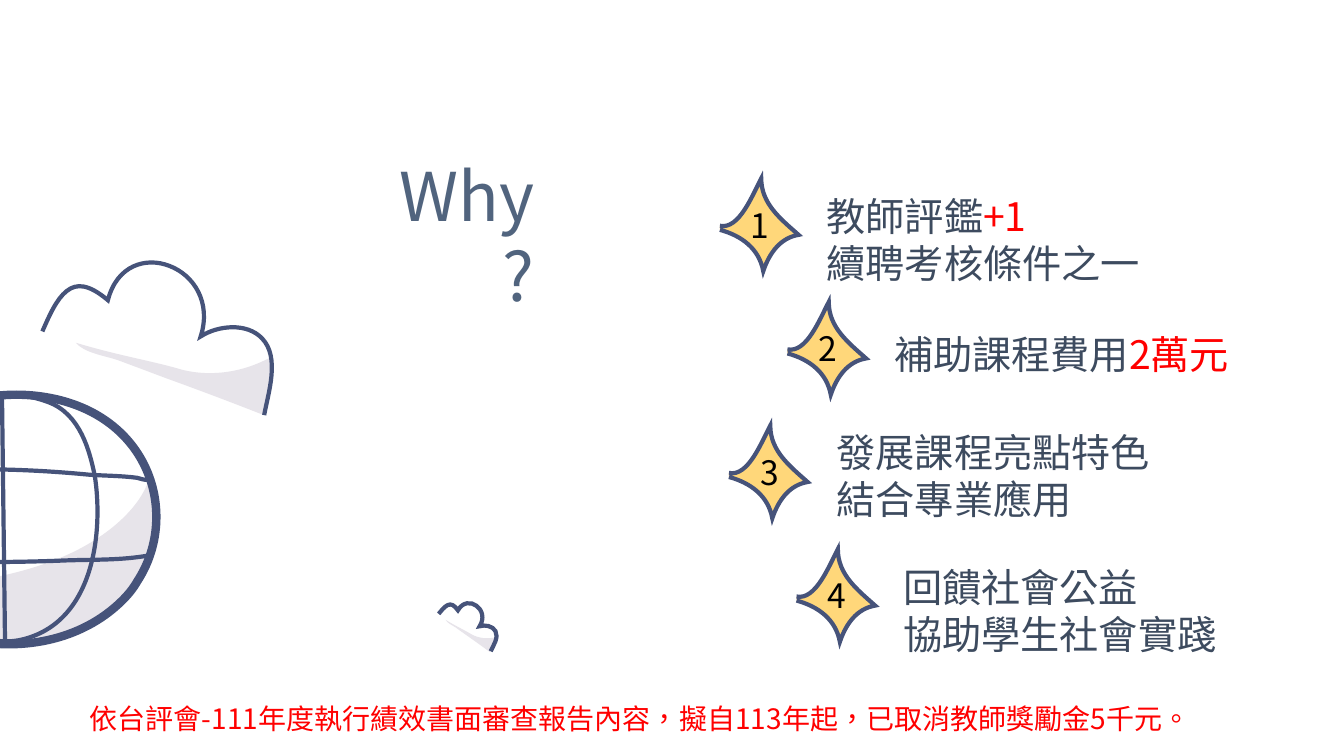
from math import cos, radians, sin

from lxml.etree import SubElement
from pptx import Presentation
from pptx.dml.color import RGBColor
from pptx.enum.shapes import MSO_CONNECTOR
from pptx.enum.text import MSO_AUTO_SIZE, PP_ALIGN
from pptx.oxml.ns import qn
from pptx.util import Cm, Pt

INK = RGBColor(0x46, 0x53, 0x7A)
GOLD = RGBColor(0xFF, 0xD7, 0x7A)
SHADE = RGBColor(0xE7, 0xE4, 0xEA)
SLATE = RGBColor(0x3D, 0x4B, 0x5F)
TITLE = RGBColor(0x51, 0x64, 0x7E)
RED = RGBColor(0xFF, 0x00, 0x00)
BLACK = RGBColor(0x00, 0x00, 0x00)
FONT = "Noto Sans CJK JP"
CM_PER_INCH = 2.54

STAR = [(0, 0.47), (0.19, 0.51), (0.32, 0.17), (0.41, 0), (0.41, 0.25), (0.6, 0.4),
        (0.78, 0.56), (0.6, 0.59), (0.49, 0.74), (0.43, 0.92), (0.39, 0.7),
        (0.22, 0.57), (0, 0.51)]

GLOBE_SHADE = [(0.56, 5.55), (0.95, 5.4), (1.37, 5.1), (1.48, 4.75), (1.7, 5.34),
               (1.43, 5.95), (0.71, 6.26), (0.16, 6.5), (-0.5, 6.41), (-0.94, 6.07),
               (-1.09, 5.95), (-1.16, 5.81), (-1.28, 5.68), (-1.22, 5.75),
               (-0.97, 5.78), (-0.88, 5.79), (-0.72, 5.81), (-0.56, 5.8),
               (-0.4, 5.78), (-0.06, 5.74), (0.26, 5.67), (0.56, 5.55)]
GLOBE_RIM = [(1.36, 5.77), (1.78, 5.13), (1.51, 4.15), (0.51, 3.95), (-0.54, 3.74),
             (-1.56, 4.53), (-1.42, 5.34), (-1.25, 6.37), (0.39, 6.77), (1.21, 5.96),
             (1.27, 5.9), (1.32, 5.84), (1.36, 5.77)]
MERIDIAN = [(0.24, 6.34), (0.96, 6.15), (1.02, 5.22), (0.94, 4.72), (0.89, 4.48),
            (0.8, 4.11), (0.48, 3.99), (-0.52, 3.62), (-0.94, 4.76), (-0.87, 5.3),
            (-0.83, 5.72), (-0.41, 6.51), (0.24, 6.34)]
UPPER_PARALLEL = [(-1.31, 4.72), (-0.59, 4.63), (0.17, 4.64), (0.89, 4.71),
                  (1.05, 4.72), (1.21, 4.72), (1.36, 4.74), (1.4, 4.75),
                  (1.42, 4.76), (1.46, 4.76)]
LOWER_PARALLEL = [(-1.34, 5.56), (-1.17, 5.53), (-0.95, 5.56), (-0.78, 5.57),
                  (-0.3, 5.58), (0.18, 5.58), (0.66, 5.56), (0.95, 5.55),
                  (1.2, 5.56), (1.48, 5.51)]

CLOUD_TILT = 20.6
CLOUD_SHADE = [(0.75, 3.4), (1.18, 3.53), (1.51, 3.58), (1.81, 3.67), (2.1, 3.74),
               (2.41, 3.69), (2.67, 3.55), (2.73, 3.67), (2.62, 4.12), (2.62, 4.12),
               (2.29, 3.99), (1.97, 3.87), (1.64, 3.75), (1.48, 3.69), (1.32, 3.63),
               (1.16, 3.57), (1.04, 3.53), (0.83, 3.5), (0.75, 3.4)]
CLOUD_EDGE = [(0.42, 3.29), (0.49, 3.13), (0.56, 2.97), (0.66, 2.89), (0.76, 2.81),
              (0.88, 2.82), (1.07, 2.98), (1.16, 2.63), (1.45, 2.55), (1.68, 2.64),
              (1.92, 2.73), (2.1, 3), (1.99, 3.34), (2.16, 3.23), (2.45, 3.2),
              (2.6, 3.36), (2.78, 3.55), (2.66, 3.9), (2.62, 4.12)]
SHADE_CENTRE = (1.78, 3.51)
EDGE_CENTRE = (1.7, 3.21)


def inches(value):
    return Cm(value * CM_PER_INCH)


def bounds(nodes, steps=40):
    points = [nodes[0]]
    for index in range(0, len(nodes) - 1, 3):
        curve = nodes[index:index + 4]
        for step in range(1, steps + 1):
            t = step / steps
            weights = ((1 - t) ** 3, 3 * t * (1 - t) ** 2, 3 * t * t * (1 - t), t ** 3)
            points.append(tuple(sum(weight * node[axis] for weight, node in zip(weights, curve))
                                for axis in (0, 1)))
    return [tuple(inches(edge(values)) for values in zip(*points)) for edge in (min, max)]


def level(nodes, centre, target, scale):
    angle = radians(-CLOUD_TILT)
    placed = []
    for x, y in nodes:
        across, down = (x - centre[0]) * scale, (y - centre[1]) * scale
        placed.append((target[0] + across * cos(angle) - down * sin(angle),
                       target[1] + across * sin(angle) + down * cos(angle)))
    return placed


class Sketch:
    def __init__(self, page):
        self.page = page
        self.shapes = page.shapes

    def group(self):
        self.shapes = self.page.shapes.add_group_shape().shapes

    def ungroup(self):
        self.shapes = self.page.shapes

    def outline(self, nodes, fill=None, weight=None, tilt=0):
        corner, opposite = bounds(nodes)
        builder = self.shapes.build_freeform(*corner, scale=1.0)
        builder.add_line_segments([opposite], close=False)
        shape = builder.convert_to_shape()
        self.bend(shape, nodes, corner)
        shape.shadow.inherit = False
        shape.rotation = tilt
        if fill is None:
            shape.fill.background()
        else:
            shape.fill.solid()
            shape.fill.fore_color.rgb = fill
        if weight is None:
            shape.line.fill.background()
        else:
            shape.line.color.rgb = INK
            shape.line.width = Pt(weight)
            SubElement(shape.line._get_or_add_ln(), qn("a:miter"), lim="800000")

    def bend(self, shape, nodes, corner):
        curves = next(shape.element.iter(qn("a:path")))
        for segment in list(curves):
            curves.remove(segment)
        segments = [("a:moveTo", nodes[:1])]
        segments += [("a:cubicBezTo", nodes[index:index + 3]) for index in range(1, len(nodes), 3)]
        for tag, points in segments:
            segment = SubElement(curves, qn(tag))
            for x, y in points:
                SubElement(segment, qn("a:pt"), x=str(inches(x) - corner[0]),
                           y=str(inches(y) - corner[1]))
        if nodes[0] == nodes[-1]:
            SubElement(curves, qn("a:close"))

    def line(self, start, end, weight):
        connector = self.shapes.add_connector(
            MSO_CONNECTOR.STRAIGHT, *(inches(value) for value in start + end))
        connector.line.color.rgb = INK
        connector.line.width = Pt(weight)
        SubElement(connector.element.spPr, qn("a:effectLst"))

    def text(self, frame, size, lines, align=PP_ALIGN.LEFT):
        box = self.shapes.add_textbox(*(inches(value) for value in frame))
        box.text_frame.word_wrap = True
        box.text_frame.auto_size = MSO_AUTO_SIZE.SHAPE_TO_FIT_TEXT
        for index, spans in enumerate(lines):
            para = box.text_frame.paragraphs[0] if index == 0 else box.text_frame.add_paragraph()
            para.alignment = align
            for words, color in spans:
                span = para.add_run()
                span.text = words
                span.font.size = Pt(size)
                span.font.name = FONT
                span.font.color.rgb = color
                span.font._element.set("lang", "zh-TW")
                SubElement(span.font._element, qn("a:ea"), typeface=FONT)

    def star(self, left, top, number):
        self.group()
        self.outline([(left + x, top + y) for x, y in STAR], GOLD, 3)
        self.text((left + 0.21, top + 0.21, 0.37, 0.5), 24, [[(str(number), BLACK)]])
        self.ungroup()

    def globe(self):
        self.group()
        self.outline(GLOBE_SHADE, fill=SHADE)
        self.outline(GLOBE_RIM, weight=6)
        self.line((0.05, 6.38), (0.02, 3.92), 3)
        for curve in (MERIDIAN, UPPER_PARALLEL, LOWER_PARALLEL):
            self.outline(curve, weight=3)
        self.ungroup()

    def cloud(self, shade_centre, edge_centre, scale, tilt):
        self.group()
        self.outline(level(CLOUD_SHADE, SHADE_CENTRE, shade_centre, scale), fill=SHADE, tilt=tilt)
        self.outline(level(CLOUD_EDGE, EDGE_CENTRE, edge_centre, scale), weight=3, tilt=tilt)
        self.ungroup()


def main():
    deck = Presentation()
    deck.slide_width, deck.slide_height = inches(13.33), inches(7.5)
    sketch = Sketch(deck.slides.add_slide(deck.slide_layouts[6]))

    sketch.text((3.85, 1.48, 1.55, 0.91), 48, [[("Why?", TITLE)]], PP_ALIGN.RIGHT)
    sketch.globe()
    sketch.cloud(SHADE_CENTRE, EDGE_CENTRE, 1, CLOUD_TILT)
    sketch.cloud((4.68, 6.25), (4.69, 6.16), 0.27, 35.6)

    reasons = [
        (7.14, (8.1, 1.86, 3.34, 1.04),
         [[("教師評鑑", SLATE), ("+1", RED)], [("續聘考核條件之一", SLATE)]]),
        (7.81, (8.77, 3.23, 3.54, 0.57),
         [[("補助課程費用", SLATE), ("2萬元", RED)]]),
        (7.23, (8.2, 4.2, 3.34, 1.04),
         [[("發展課程亮點特色", SLATE)], [("結合專業應用", SLATE)]]),
        (7.9, (8.86, 5.54, 3.34, 1.04),
         [[("回饋社會公益", SLATE)], [("協助學生社會實踐", SLATE)]]),
    ]
    for index, (star_left, frame, lines) in enumerate(reasons):
        sketch.star(star_left, 1.77 + index * 1.226, index + 1)
        sketch.text(frame, 28, lines)

    notice = "依台評會-111年度執行績效書面審查報告內容，擬自113年起，已取消教師獎勵金5千元。"
    sketch.text((0.79, 6.91, 12.54, 0.44), 20, [[(notice, RED)]])
    deck.save("out.pptx")


if __name__ == "__main__":
    main()
